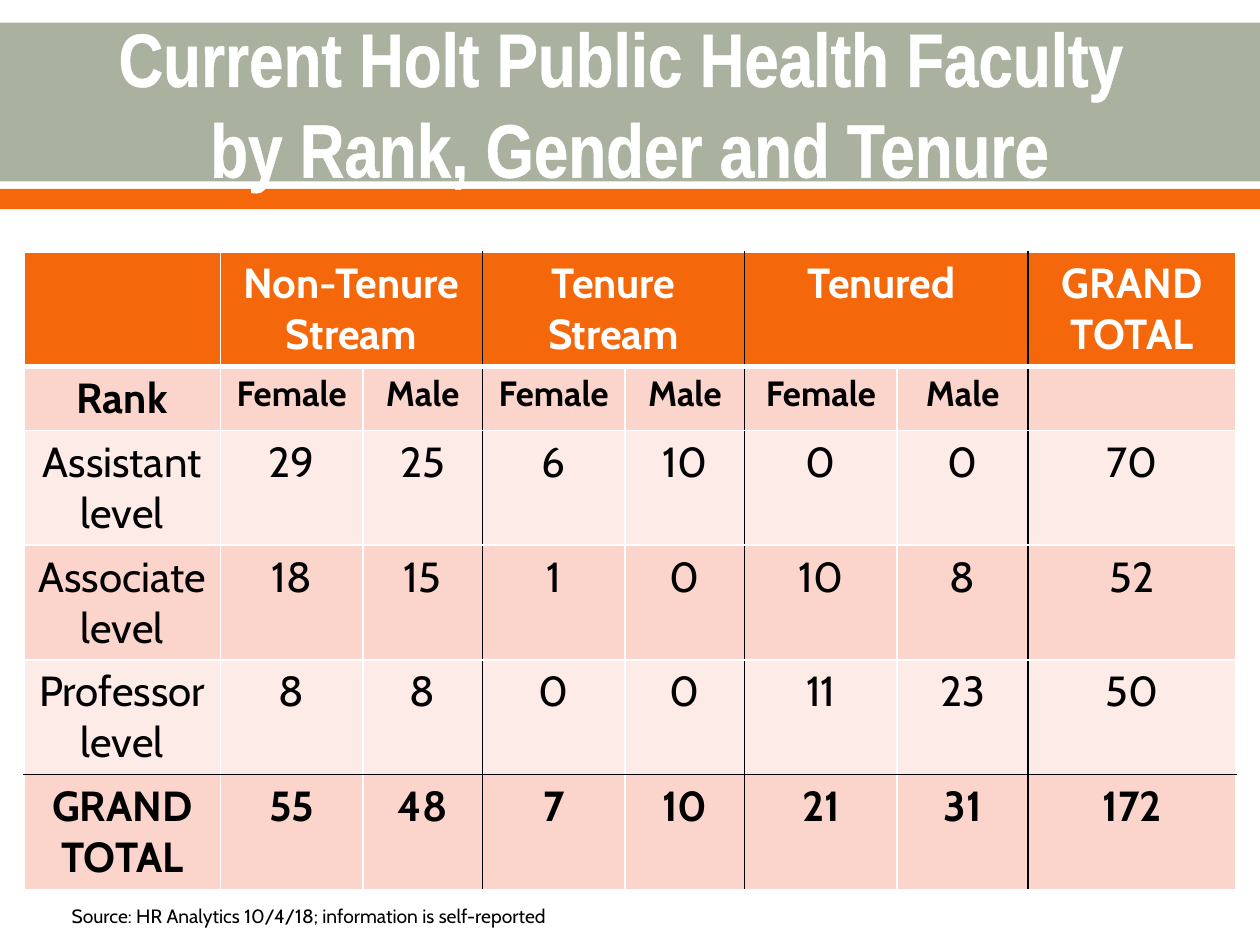
import dataclasses

import lxml.etree
import pptx
import pptx.dml.color
import pptx.enum.shapes
import pptx.enum.text
import pptx.oxml.ns
import pptx.util

Pt = pptx.util.Pt
WHITE, BLACK, ORANGE, SAGE = "FFFFFF", "000000", "F4680B", "ABB19F"
ROSE, BLUSH = "FBD4CC", "FDEBE7"
CENTER = pptx.enum.text.PP_ALIGN.CENTER


@dataclasses.dataclass
class Band:
    top: float
    height: float
    color: str


@dataclasses.dataclass
class TableRow:
    texts: list[str]
    fill: str
    color: str = BLACK
    bold: bool = True
    value_size: float = 24


BANDS = [Band(13, 90.7, SAGE), Band(108, 11.5, ORANGE)]
COLUMN_WIDTHS = [112.3, 81.4, 68.4, 81.4, 68.4, 87.1, 74.9, 118.8]
GROUP_STARTS = (1, 3, 5)
DIVIDERS = (3, 5, 7)
TOTAL_ROW = 5
ROWS = [
    TableRow(["", "Non-Tenure Stream", "", "Tenure Stream", "", "Tenured ", "", "GRAND TOTAL"],
             ORANGE, WHITE),
    TableRow(["Rank"] + ["Female", "Male"] * 3 + [""], ROSE, value_size=20),
    TableRow(["Assistant level", "29", "25", "6", "10", "0", "0", "70"], BLUSH, bold=False),
    TableRow(["Associate level", "18", "15", "1", "0", "10", "8", "52"], ROSE, bold=False),
    TableRow(["Professor level", "8", "8", "0", "0", "11", "23", "50"], BLUSH, bold=False),
    TableRow(["GRAND TOTAL", "55", "48", "7", "10", "21", "31", "172"], ROSE),
]


def rgb(color: str) -> pptx.dml.color.RGBColor:
    return pptx.dml.color.RGBColor.from_string(color)


def add_line(parent, tag: str, color: str, width: float) -> None:
    line = lxml.etree.SubElement(parent, pptx.oxml.ns.qn(tag), w=str(int(Pt(width))))
    fill = lxml.etree.SubElement(line, pptx.oxml.ns.qn("a:solidFill"))
    lxml.etree.SubElement(fill, pptx.oxml.ns.qn("a:srgbClr"), val=color)


def format_runs(paragraph, font: str, size: float, color: str, bold: bool) -> None:
    for run in paragraph.runs:
        run.font.name = font
        run.font.size = Pt(size)
        run.font.bold = bold
        run.font.color.rgb = rgb(color)


def draw_band(slide, band: Band) -> None:
    stripe = slide.shapes.add_shape(pptx.enum.shapes.MSO_SHAPE.RECTANGLE,
                                    0, Pt(band.top), Pt(720), Pt(band.height))
    stripe.shadow.inherit = False
    stripe.fill.solid()
    stripe.fill.fore_color.rgb = rgb(band.color)
    stripe.line.fill.background()


def draw_title(slide) -> None:
    title = slide.shapes.title
    title.element.getparent().append(title.element)
    title.left, title.top, title.width, title.height = Pt(36), Pt(14.4), Pt(648), Pt(87.8)
    frame = title.text_frame
    frame.text = "Current Holt Public Health Faculty \vby Rank, Gender and Tenure"
    frame.word_wrap = True
    frame.auto_size = pptx.enum.text.MSO_AUTO_SIZE.NONE
    frame.vertical_anchor = pptx.enum.text.MSO_ANCHOR.MIDDLE
    heading = frame.paragraphs[0]
    heading.alignment = CENTER
    for run in heading.runs:
        add_line(run.font._element, "a:ln", WHITE, 1.1)
    format_runs(heading, "Arial Narrow", 43.2, WHITE, True)


def draw_borders(cell, row: int, column: int) -> None:
    borders = {
        "a:lnL": (BLACK if column in DIVIDERS else WHITE, 1),
        "a:lnR": (BLACK if column + 1 in DIVIDERS else WHITE, 1),
        "a:lnT": (BLACK if row == TOTAL_ROW else WHITE, 3 if row == 1 else 1),
        "a:lnB": (BLACK if row + 1 == TOTAL_ROW else WHITE, 3 if row == 0 else 1),
    }
    properties = cell._tc.get_or_add_tcPr()
    for tag, (color, width) in borders.items():
        add_line(properties, tag, color, width)


def draw_faculty_table(slide) -> None:
    frame = slide.shapes.add_table(len(ROWS), len(COLUMN_WIDTHS),
                                   Pt(13.7), Pt(144), Pt(692.7), Pt(360))
    table = frame.table
    for column, width in zip(table.columns, COLUMN_WIDTHS):
        column.width = Pt(width)
    for row in table.rows:
        row.height = Pt(29.5)
    frame.height = Pt(360)
    for start in GROUP_STARTS:
        table.cell(0, start).merge(table.cell(0, start + 1))
    for row_index, row in enumerate(ROWS):
        for column_index, text in enumerate(row.texts):
            cell = table.cell(row_index, column_index)
            draw_borders(cell, row_index, column_index)
            cell.fill.solid()
            cell.fill.fore_color.rgb = rgb(row.fill)
            if text:
                cell.text_frame.text = text
                paragraph = cell.text_frame.paragraphs[0]
                paragraph.alignment = CENTER
                size = row.value_size if column_index else 24
                format_runs(paragraph, "Cabin", size, row.color, row.bold)


def draw_source_note(slide) -> None:
    note = slide.shapes.add_textbox(Pt(33.8), Pt(513.4), Pt(295.9), Pt(20.9))
    note.text_frame.word_wrap = True
    note.text_frame.text = "Source: HR Analytics 10/4/18; information is self-reported"
    note.text_frame.auto_size = pptx.enum.text.MSO_AUTO_SIZE.SHAPE_TO_FIT_TEXT
    format_runs(note.text_frame.paragraphs[0], "Cabin", 11, BLACK, False)


def main() -> None:
    presentation = pptx.Presentation()
    presentation.slide_width, presentation.slide_height = Pt(720), Pt(540)
    slide = presentation.slides.add_slide(presentation.slide_layouts[5])
    for band in BANDS:
        draw_band(slide, band)
    draw_title(slide)
    draw_faculty_table(slide)
    draw_source_note(slide)
    presentation.save("out.pptx")


if __name__ == "__main__":
    main()
